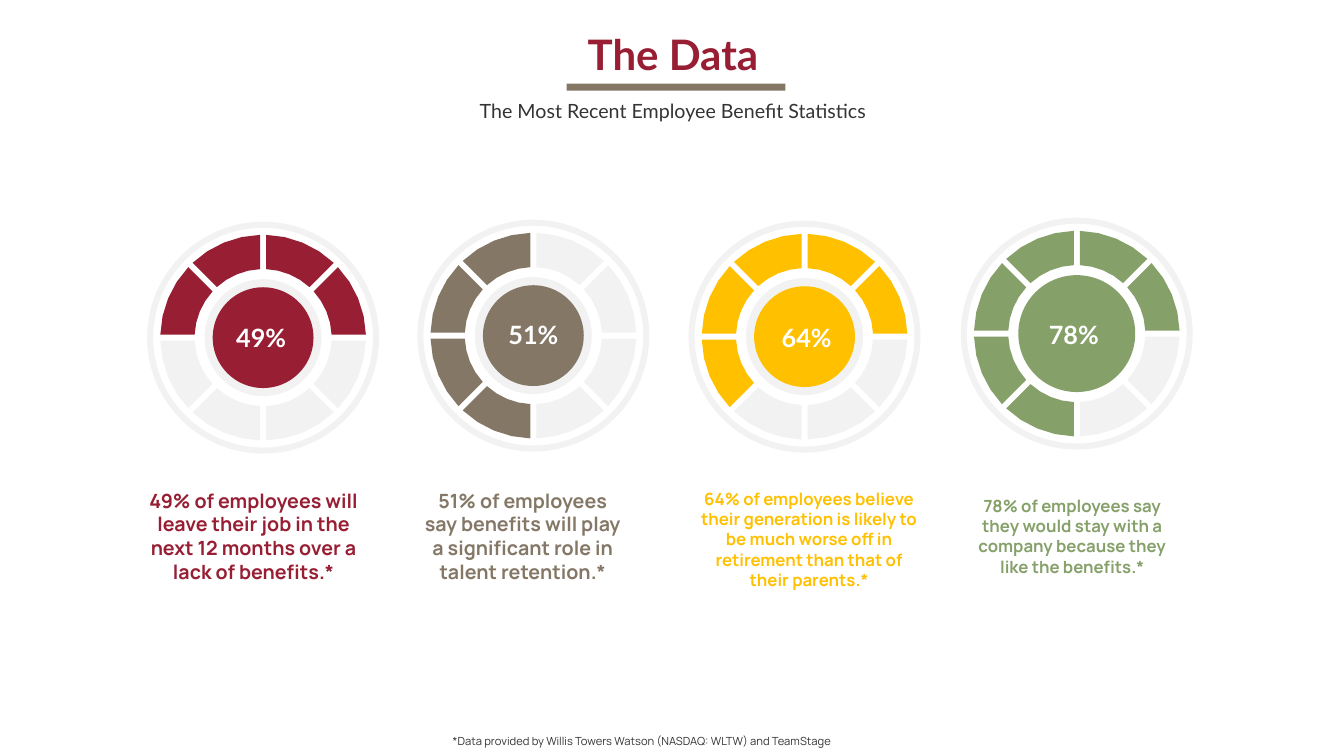
from math import asin, cos, pi, sin

from pptx import Presentation
from pptx.dml.color import RGBColor
from pptx.enum.shapes import MSO_SHAPE
from pptx.enum.text import MSO_ANCHOR, MSO_AUTO_SIZE, PP_ALIGN
from pptx.util import Inches, Pt

RECTANGLE, OVAL, DONUT = MSO_SHAPE.RECTANGLE, MSO_SHAPE.OVAL, MSO_SHAPE.DONUT
TOP, MIDDLE = MSO_ANCHOR.TOP, MSO_ANCHOR.MIDDLE
CENTER = PP_ALIGN.CENTER
NO_AUTOFIT = MSO_AUTO_SIZE.NONE

COLORS = {
    "red": "971E33",
    "taupe": "847766",
    "gold": "FFC000",
    "green": "86A06A",
    "pale": "F2F2F2",
    "dark": "343433",
    "white": "FFFFFF",
}

# Dial measures in inches
DIAL_SIZE, HALO_SIZE, HUB_SIZE = 2.3, 1.16, 1.0
RIM_WIDTH = 0.06
OUTER_RADIUS, INNER_RADIUS = 1.02, 0.68
HALF_GAP = 0.03
SEGMENTS = 8
ARC_STEPS = 4

# Filled segments count clockwise from the top
STATISTICS = [
    {"value": "49%", "color": "red", "halo": "pale", "filled": {0, 1, 6, 7},
     "dial": (1.46, 2.2), "label": (2.2, 3.2), "caption": (1.29, 4.79, 2.45, 1.06), "size": 14,
     "text": "49% of employees will leave their job in the next 12 months over a lack of benefits.*"},
    {"value": "51%", "color": "taupe", "halo": "pale", "filled": {4, 5, 6, 7},
     "dial": (4.14, 2.18), "label": (4.9, 3.17), "caption": (4.06, 4.79, 2.25, 1.3), "size": 14,
     "text": "51% of employees say benefits will play a significant role in talent retention.*"},
    {"value": "64%", "color": "gold", "halo": "pale", "filled": {0, 1, 5, 6, 7},
     "dial": (6.83, 2.19), "label": (7.61, 3.2), "caption": (6.8, 4.79, 2.45, 1.13), "size": 12,
     "text": "64% of employees believe their generation is likely to be much worse off in "
             "retirement than that of their parents.*"},
    {"value": "78%", "color": "green", "halo": "green", "filled": {0, 1, 4, 5, 6, 7},
     "dial": (9.53, 2.16), "label": (10.26, 3.17), "caption": (9.45, 4.86, 2.37, 0.93), "size": 12,
     "text": "78% of employees say they would stay with a company because they like the benefits.*"},
]


def rgb(name):
    return RGBColor.from_string(COLORS[name])


def paint(shape, color):
    shape.shadow.inherit = False
    shape.fill.solid()
    shape.fill.fore_color.rgb = rgb(color)
    shape.line.fill.background()


def add_figure(page, kind, box, color):
    shape = page.shapes.add_shape(kind, *map(Inches, box))
    paint(shape, color)
    return shape


def place(shape, box):
    shape.left, shape.top, shape.width, shape.height = map(Inches, box)


def write(shape, text, font, size, color, bold=False, insets=(0.12, 0.06), anchor=TOP):
    frame = shape.text_frame
    frame.word_wrap = True
    frame.auto_size = NO_AUTOFIT
    frame.vertical_anchor = anchor
    frame.margin_left = frame.margin_right = Inches(insets[0])
    frame.margin_top = frame.margin_bottom = Inches(insets[1])
    para = frame.paragraphs[0]
    para.text = text
    para.alignment = CENTER
    para.font.name = font
    para.font.size = Pt(size)
    para.font.bold = bold
    para.font.color.rgb = rgb(color)
    return para


def add_text(page, box, text, *style, **options):
    return write(page.shapes.add_textbox(*map(Inches, box)), text, *style, **options)


def add_heading(page, box):
    left, top, width, height = box
    title, subtitle = page.shapes.title, page.placeholders[1]
    place(title, (left, top, width, 0.56))
    write(title, "The Data", "Lato", 30, "red", bold=True, insets=(0.05, 0.02), anchor=MIDDLE)
    place(subtitle, (left, top + 0.62, width, height - 0.62))
    para = write(subtitle, "The Most Recent Employee Benefit Statistics", "Lato", 14, "dark")
    para.line_spacing = 1.2
    para.space_before = Pt(0)
    add_figure(page, RECTANGLE, (left + 1.31, top + 0.58, 2.17, 0.07), "taupe")


def arc(center, radius, index):
    """Points along one segment, trimmed for parallel gaps."""
    trim = asin(HALF_GAP / radius)
    start = index * 2 * pi / SEGMENTS + trim
    sweep = 2 * pi / SEGMENTS - 2 * trim
    angles = [start + sweep * step / ARC_STEPS for step in range(ARC_STEPS + 1)]
    return [(Inches(center[0] + radius * sin(angle)), Inches(center[1] - radius * cos(angle)))
            for angle in angles]


def add_segment(page, center, index, color):
    points = arc(center, OUTER_RADIUS, index) + arc(center, INNER_RADIUS, index)[::-1]
    builder = page.shapes.build_freeform(*points[0])
    builder.add_line_segments(points[1:], close=True)
    paint(builder.convert_to_shape(), color)


def add_dial(page, corner, statistic):
    center = [edge + DIAL_SIZE / 2 for edge in corner]

    def centered(size):
        return center[0] - size / 2, center[1] - size / 2, size, size

    for index in range(SEGMENTS):
        color = statistic["color"] if index in statistic["filled"] else "pale"
        add_segment(page, center, index, color)
    add_figure(page, OVAL, centered(HALO_SIZE), statistic["halo"])
    rim = add_figure(page, DONUT, centered(DIAL_SIZE), "pale")
    rim.adjustments[0] = RIM_WIDTH / DIAL_SIZE
    add_figure(page, OVAL, centered(HUB_SIZE), statistic["color"])


def add_statistic(page, statistic):
    add_dial(page, statistic["dial"], statistic)
    add_text(page, (*statistic["label"], 0.78, 0.3), statistic["value"],
             "Lato", 18, "white", bold=True, insets=(0, 0))
    add_text(page, statistic["caption"], statistic["text"],
             "Manrope", statistic["size"], statistic["color"], bold=True)


def add_source_line(page, box):
    add_text(page, box, "*Data provided by Willis Towers Watson (NASDAQ: WLTW) and TeamStage",
             "Manrope", 8, "dark", insets=(0.1, 0.05))


def main():
    deck = Presentation()
    deck.slide_width, deck.slide_height = Inches(13.33), Inches(7.5)
    page = deck.slides.add_slide(deck.slide_layouts[0])
    add_heading(page, (4.31, 0.25, 4.73, 0.99))
    for statistic in STATISTICS:
        add_statistic(page, statistic)
    add_source_line(page, (4.19, 7.24, 4.36, 0.24))
    deck.save("out.pptx")


if __name__ == "__main__":
    main()
